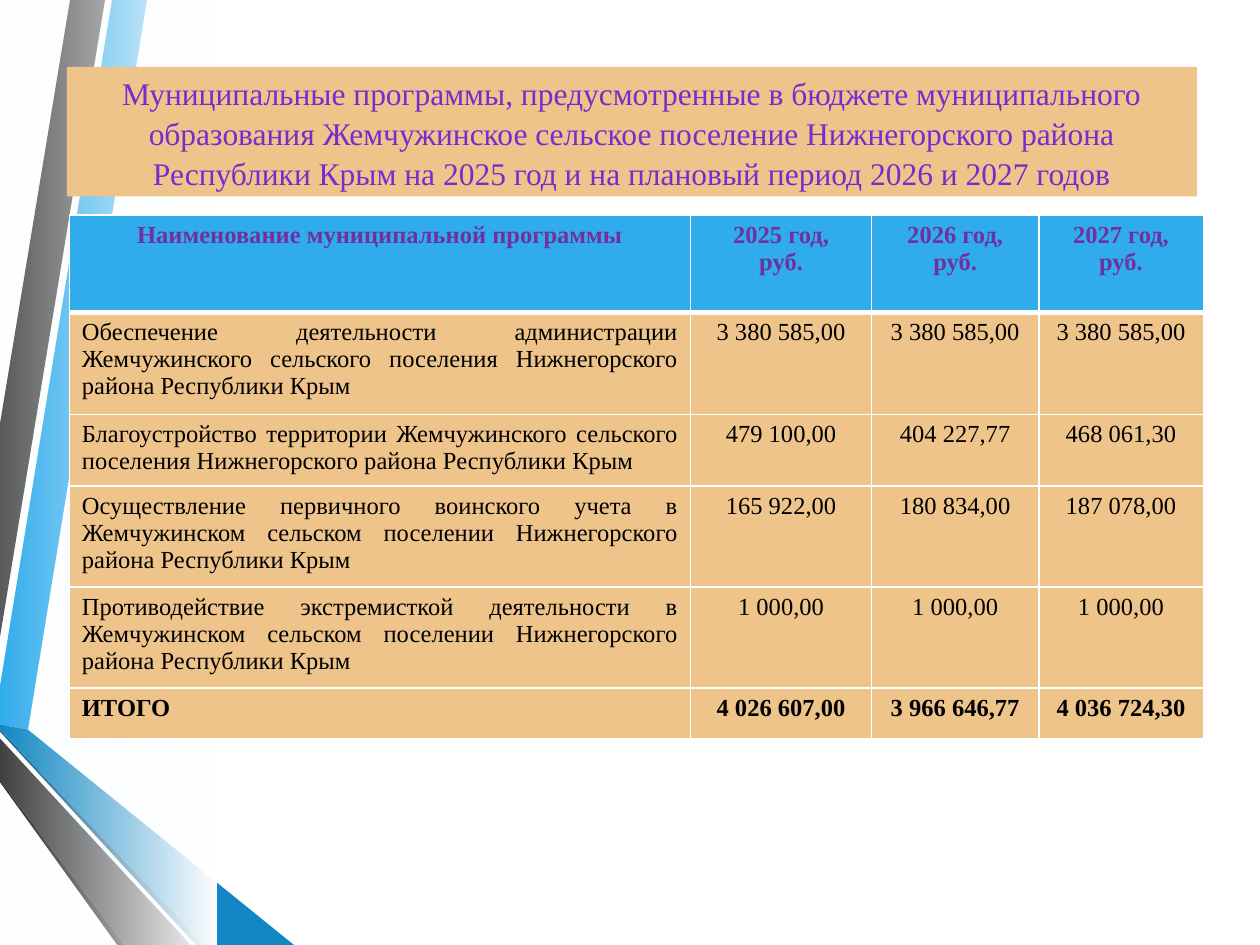
"""Build the slide with the municipal programmes of the 2025-2027 budget."""
import dataclasses

import lxml.etree
import pptx
import pptx.dml.color
import pptx.enum.shapes
import pptx.enum.text
import pptx.oxml.ns
import pptx.util

Pt = pptx.util.Pt
qn = pptx.oxml.ns.qn
ALIGN = pptx.enum.text.PP_ALIGN


@dataclasses.dataclass(frozen=True)
class Theme:
    font: str = "Times New Roman"
    title_size: int = 18
    table_size: int = 14
    title: str = "7E28CD"
    header: str = "7030A0"
    body: str = "000000"
    blue: str = "30ACEC"
    sand: str = "EEC48B"
    white: str = "FFFFFF"
    haze: str = "F5FBFE"
    grey: str = "595959"
    black: str = "262626"
    navy: str = "0C5A82"
    azure: str = "1287C3"
    charcoal: str = "404040"


THEME = Theme()
rgb = pptx.dml.color.RGBColor.from_string


def style_text(frame, size, color, align, bold=False):
    for paragraph in frame.paragraphs:
        paragraph.alignment = align
        for run in paragraph.runs:
            run.font.name = THEME.font
            run.font.size = Pt(size)
            run.font.bold = bold
            run.font.color.rgb = rgb(color)


def add_borders(cell, widths):
    properties = cell._tc.get_or_add_tcPr()
    for index, (side, width) in enumerate(widths.items()):
        border = lxml.etree.Element(qn(f"a:ln{side}"), w=str(Pt(width)))
        solid = lxml.etree.SubElement(border, qn("a:solidFill"))
        lxml.etree.SubElement(solid, qn("a:srgbClr"), val=THEME.white)
        properties.insert(index, border)


presentation = pptx.Presentation()
presentation.slide_width = Pt(720)
presentation.slide_height = Pt(540)
slide = presentation.slides.add_slide(presentation.slide_layouts[6])

ribbons = [
    (THEME.blue, [(0, 392), (0, 414), (16, 417), (84, 0), (64, 0)]),
    (THEME.grey, [(60, 0), (40, 0), (0, 242), (0, 364)]),
    (THEME.black, [(0, 446), (0, 447), (67, 540), (71, 540)]),
    (THEME.navy, [(0, 417), (0, 418), (112, 540), (117, 540)]),
    (THEME.azure, [(0, 417), (117, 540), (168, 540), (16, 417), (0, 414)]),
    (THEME.charcoal, [(0, 446), (71, 540), (109, 540), (0, 422)]),
]
for color, points in ribbons:
    outline = slide.shapes.build_freeform(*points[0], scale=Pt(1))
    outline.add_line_segments(points[1:], close=True)
    ribbon = outline.convert_to_shape()
    ribbon.shadow.inherit = False
    ribbon.fill.solid()
    ribbon.fill.fore_color.rgb = rgb(color)
    ribbon.line.fill.background()

haze = slide.shapes.add_shape(
    pptx.enum.shapes.MSO_SHAPE.RECTANGLE, Pt(0), Pt(0), Pt(124), Pt(540))
haze.shadow.inherit = False
haze.line.fill.background()
haze.fill.gradient()
haze.fill.gradient_angle = 0
for stop, color in zip(haze.fill.gradient_stops, (THEME.haze, THEME.white)):
    stop.color.rgb = rgb(color)
clear_end = haze._element.find(".//" + qn("a:srgbClr"))
lxml.etree.SubElement(clear_end, qn("a:alpha"), val="0")

title = slide.shapes.add_textbox(Pt(38.2), Pt(38.2), Pt(645.8), Pt(74))
title.fill.solid()
title.fill.fore_color.rgb = rgb(THEME.sand)
title.text_frame.word_wrap = True
title.text_frame.vertical_anchor = pptx.enum.text.MSO_ANCHOR.MIDDLE
title.text_frame.text = (
    "Муниципальные программы, предусмотренные в бюджете муниципального "
    "образования Жемчужинское сельское поселение Нижнегорского района "
    "Республики Крым на 2025 год и на плановый период 2026 и 2027 годов")
title.text_frame.paragraphs[0].line_spacing = 1.07
style_text(title.text_frame, THEME.title_size, THEME.title, ALIGN.CENTER)

programmes = [
    ("Наименование муниципальной программы",
     "2025 год,\nруб.", "2026 год, руб.", "2027 год, руб."),
    ("Обеспечение деятельности администрации Жемчужинского сельского "
     "поселения Нижнегорского района Республики Крым",
     "3 380 585,00", "3 380 585,00", "3 380 585,00"),
    ("Благоустройство территории Жемчужинского сельского поселения "
     "Нижнегорского района Республики Крым",
     "479 100,00", "404 227,77", "468 061,30"),
    ("Осуществление первичного воинского учета в Жемчужинском сельском "
     "поселении Нижнегорского района Республики Крым",
     "165 922,00", "180 834,00", "187 078,00"),
    ("Противодействие экстремисткой деятельности в Жемчужинском сельском "
     "поселении Нижнегорского района Республики Крым",
     "1 000,00", "1 000,00", "1 000,00"),
    ("ИТОГО", "4 026 607,00", "3 966 646,77", "4 036 724,30"),
]
column_widths = [355, 103.5, 95.5, 94]
row_heights = [55.5, 58.5, 40.5, 57.5, 57.5, 28.8]
budget = slide.shapes.add_table(
    len(programmes), len(column_widths), Pt(39.6), Pt(123),
    Pt(sum(column_widths)), Pt(sum(row_heights))).table
for column, width in zip(budget.columns, column_widths):
    column.width = Pt(width)
for row, height in zip(budget.rows, row_heights):
    row.height = Pt(height)

total_row = len(programmes) - 1
for row_index, programme in enumerate(programmes):
    is_header = row_index == 0
    is_total = row_index == total_row
    for column_index, content in enumerate(programme):
        cell = budget.cell(row_index, column_index)
        cell.text_frame.text = content
        cell.fill.solid()
        cell.fill.fore_color.rgb = rgb(THEME.blue if is_header else THEME.sand)
        if is_header or column_index > 0:
            align = ALIGN.CENTER
        else:
            align = ALIGN.LEFT if is_total else ALIGN.JUSTIFY
        style_text(cell.text_frame, THEME.table_size,
                   THEME.header if is_header else THEME.body,
                   align, is_header or is_total)
        add_borders(cell, {"L": 1, "R": 1, "T": 3 if row_index == 1 else 1,
                           "B": 3 if is_header else 1})

presentation.save("out.pptx")
